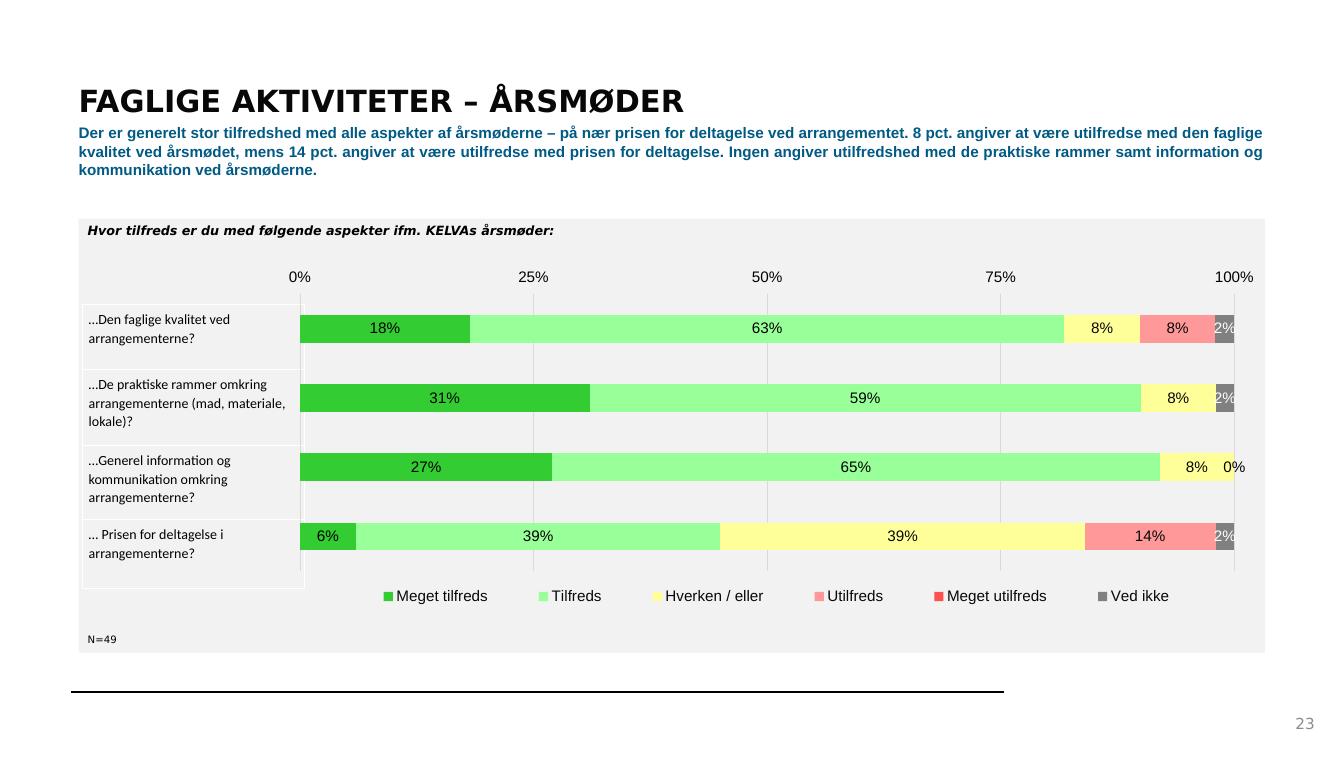
from lxml.etree import SubElement as Sub
from pptx import Presentation
from pptx.chart.data import CategoryChartData as ChartData
from pptx.dml.color import RGBColor as RGB
from pptx.enum.chart import XL_CHART_TYPE as Kind, XL_LEGEND_POSITION as Spot
from pptx.enum.chart import XL_TICK_MARK as Tick
from pptx.enum.shapes import MSO_CONNECTOR as Conn, MSO_SHAPE as Shape
from pptx.enum.text import MSO_ANCHOR as Anchor, PP_ALIGN as Align
from pptx.oxml import parse_xml
from pptx.oxml.ns import nsdecls, qn
from pptx.util import Inches, Pt

LEAD = (
    "Der er generelt stor tilfredshed med alle aspekter af årsmøderne – på nær prisen "
    "for deltagelse ved arrangementet. 8 pct. angiver at være utilfredse med den faglige "
    "kvalitet ved årsmødet, mens 14 pct. angiver at være utilfredse med prisen for "
    "deltagelse. Ingen angiver utilfredshed med de praktiske rammer samt information og "
    "kommunikation ved årsmøderne."
)
ASPECTS = [
    ("…Den faglige kvalitet ved arrangementerne?", 0.71),
    ("…De praktiske rammer omkring arrangementerne (mad, materiale, lokale)?", 0.83),
    ("…Generel information og kommunikation omkring arrangementerne?", 0.81),
    ("… Prisen for deltagelse i arrangementerne?", 0.75),
]
# Name, values, fill, label colour, label format
SERIES = [
    ("Meget tilfreds", (0.18, 0.31, 0.27, 0.06), "33CC33", "000000", "0%"),
    ("Tilfreds", (0.63, 0.59, 0.65, 0.39), "99FF99", "000000", "0%"),
    ("Hverken / eller", (0.08, 0.08, 0.08, 0.39), "FFFF99", "080808", "0%"),
    ("Utilfreds", (0.08, 0, 0, 0.14), "FF9999", "080808", "0%;;"),
    ("Meget utilfreds", (0, 0, 0, 0), "FF5050", None, None),
    ("Ved ikke", (0.02, 0.02, 0, 0.02), "808080", "FFFFFF", "0%"),
]
SANS = "DejaVu Sans"


def color(code):
    return RGB.from_string(code)


def style(font, code, **look):
    font.color.rgb = color(code)
    for key, value in look.items():
        setattr(font, key, value)


def paint(fill, code):
    fill.solid()
    fill.fore_color.rgb = color(code)


def add_text(slide, box, text, code, look, para=None, pad=(0, 0), anchor=Anchor.TOP):
    frame = slide.shapes.add_textbox(*map(Inches, box)).text_frame
    frame.word_wrap = True
    frame.vertical_anchor = anchor
    frame.margin_left = frame.margin_right = Inches(pad[0])
    frame.margin_top = frame.margin_bottom = Inches(pad[1])
    line = frame.paragraphs[0]
    line.text = text
    for key, value in (para or {}).items():
        setattr(line, key, value)
    style(line.font, code, **look)


def add_panel(slide):
    panel = slide.shapes.add_shape(
        Shape.RECTANGLE, *map(Inches, (0.86, 2.39, 12.97, 4.74)))
    panel.shadow.inherit = False
    paint(panel.fill, "F2F2F2")
    panel.line.fill.background()


def add_rule(slide):
    rule = slide.shapes.add_connector(
        Conn.STRAIGHT, *map(Inches, (0.78, 7.56, 10.97, 7.56)))
    rule.line.color.rgb = color("000000")
    rule.line.width = Pt(1)
    Sub(rule._element.spPr, qn("a:effectLst"))


def add_aspects(slide):
    table = slide.shapes.add_table(
        len(ASPECTS), 1, *map(Inches, (0.9, 3.33, 2.43, 3.1))).table
    table.first_row = table.horz_banding = False
    for row, (text, height) in enumerate(ASPECTS):
        table.rows[row].height = Inches(height)
        cell = table.cell(row, 0)
        cell.fill.background()
        cell.margin_left = cell.margin_right = Inches(0.07)
        cell.margin_top = cell.margin_bottom = Inches(0.06)
        line = cell.text_frame.paragraphs[0]
        line.text = text
        line.line_spacing = 1.07
        style(line.font, "000000", name="Calibri", size=Pt(11))


def set_layout(parent, index, box, inner=False):
    for old in parent.findall(qn("c:layout")):
        parent.remove(old)
    target = '<c:layoutTarget val="inner"/>' if inner else ""
    modes = "".join(f'<c:{key}Mode val="edge"/>' for key in "xy")
    sizes = "".join(f'<c:{key} val="{value}"/>' for key, value in zip("xywh", box))
    parent.insert(index, parse_xml(
        f'<c:layout {nsdecls("c")}><c:manualLayout>{target}{modes}{sizes}'
        "</c:manualLayout></c:layout>"))


def add_chart(slide):
    look = {"name": "Arial", "size": Pt(12)}
    data = ChartData(number_format="0%")
    data.categories = ["1", "2", "3", "4"]
    for name, values, *_ in SERIES:
        data.add_series(name, values)
    chart = slide.shapes.add_chart(
        Kind.BAR_STACKED_100, *map(Inches, (2.93, 2.87, 10.9, 3.86)), data).chart
    chart.has_title = False
    style(chart.font, "000000", name=SANS, size=Pt(18))

    # Axes
    chart.category_axis.visible = False
    chart.category_axis.reverse_order = True
    axis = chart.value_axis
    axis.minimum_scale, axis.maximum_scale, axis.major_unit = 0, 1, 0.25
    axis.major_tick_mark = Tick.OUTSIDE
    axis.format.line.fill.background()
    axis.major_gridlines.format.line.color.rgb = color("D9D9D9")
    axis.major_gridlines.format.line.width = Pt(0.75)
    axis.tick_labels.number_format = "0%"
    axis.tick_labels.number_format_is_linked = False
    style(axis.tick_labels.font, "000000", **look)

    # Bars and labels
    plot = chart.plots[0]
    plot.gap_width, plot.overlap, plot.vary_by_categories = 150, 100, False
    for bar, (_, _, fill, ink, form) in zip(plot.series, SERIES):
        paint(bar.format.fill, fill)
        if ink:
            labels = bar.data_labels
            labels.show_value = True
            labels.number_format = form
            labels.number_format_is_linked = False
            style(labels.font, ink, **look)
    style(plot.series[-1].points[2].data_label.font, "000000", **look)

    # Legend
    chart.has_legend = True
    chart.legend.position = Spot.BOTTOM
    chart.legend.include_in_layout = False
    style(chart.legend.font, "080808", **look)
    set_layout(chart.legend._element, 1, (0.07, 0.89, 0.88, 0.11))
    area = chart._chartSpace.chart.plotArea
    set_layout(area, 0, (0.032, 0.089, 0.937, 0.784), inner=True)


def main():
    deck = Presentation()
    deck.slide_width, deck.slide_height = Inches(14.69), Inches(8.27)
    slide = deck.slides.add_slide(deck.slide_layouts[6])
    add_rule(slide)

    # Heading and lead
    add_text(slide, (0.86, 0.76, 12.38, 0.52), "FAGLIGE AKTIVITETER – ÅRSMØDER",
             "080808", {"name": SANS, "size": Pt(24), "bold": True},
             {"line_spacing": Pt(40)}, anchor=Anchor.MIDDLE)
    add_text(slide, (0.86, 1.35, 12.97, 1.04), LEAD,
             "005A84", {"name": "Arial", "size": Pt(12), "bold": True},
             {"line_spacing": Pt(14.5), "alignment": Align.JUSTIFY})

    # Survey panel
    add_panel(slide)
    add_text(slide, (0.86, 2.39, 12.97, 0.27),
             "Hvor tilfreds er du med følgende aspekter ifm. KELVAs årsmøder:",
             "000000", {"name": SANS, "size": Pt(10), "bold": True, "italic": True},
             pad=(0.1, 0.05))
    add_text(slide, (0.86, 6.87, 0.75, 0.24), "N=49",
             "000000", {"name": SANS, "size": Pt(8)}, pad=(0.1, 0.05))
    add_aspects(slide)
    add_chart(slide)

    # Page number
    add_text(slide, (11.04, 7.68, 3.43, 0.44), "23",
             "8C8C8C", {"name": SANS, "size": Pt(12)},
             {"alignment": Align.RIGHT}, (0.1, 0.05), Anchor.MIDDLE)
    deck.save("out.pptx")


if __name__ == "__main__":
    main()
